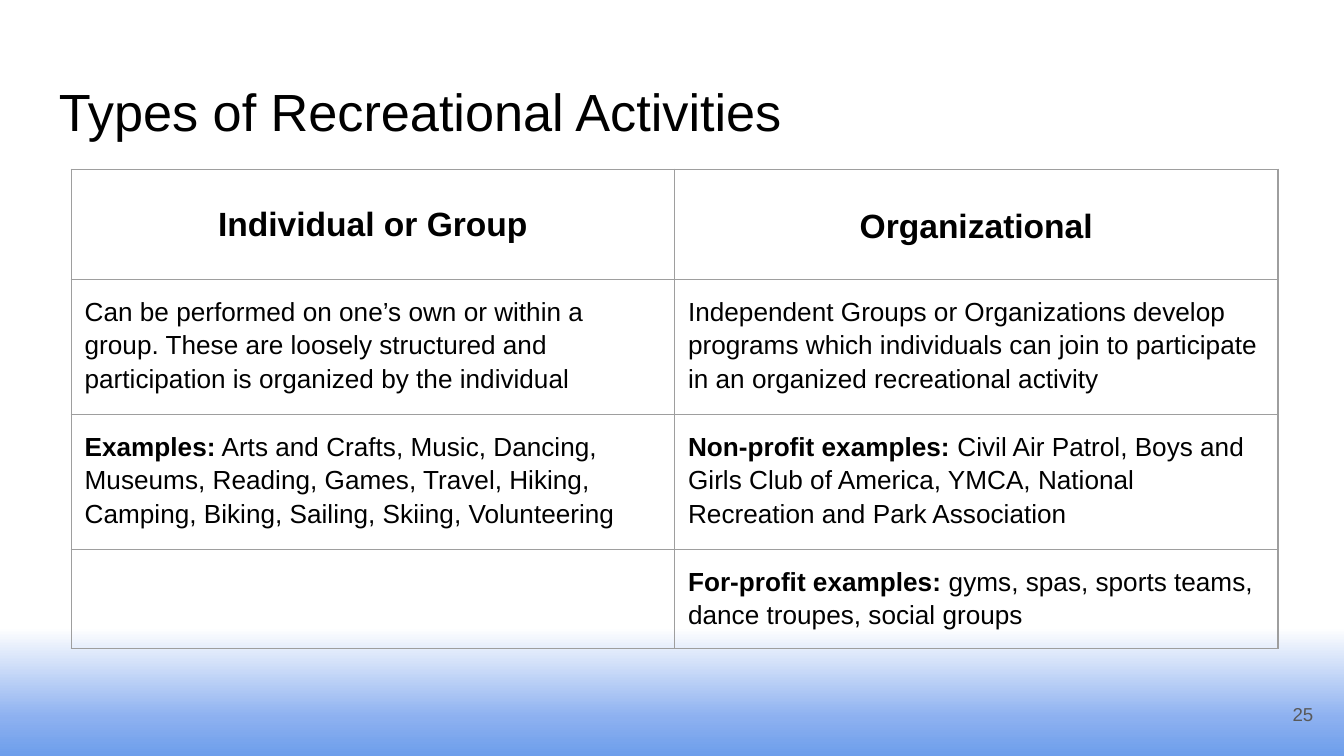
"""Build a slide comparing individual and organizational recreation."""
from pptx import Presentation
from pptx.dml.color import RGBColor
from pptx.enum.text import MSO_ANCHOR, PP_ALIGN
from pptx.oxml import parse_xml
from pptx.oxml.ns import nsdecls, qn
from pptx.util import Inches, Pt

LEFT, CENTER, RIGHT = PP_ALIGN.LEFT, PP_ALIGN.CENTER, PP_ALIGN.RIGHT
TOP, MIDDLE = MSO_ANCHOR.TOP, MSO_ANCHOR.MIDDLE

THEME = {
    "font": "Arial",
    "text": "000000",
    "muted": "595959",
    "border": "9E9E9E",
    "border_width": Pt(0.75),
    "background": [(0, "FFFFFF"), (83, "FFFFFF"), (95, "8CB0F0"), (100, "6D9EEB")],
    "title_size": 28,
    "header_size": 18,
    "body_size": 14,
    "number_size": 10,
    "inset": Inches(0.1),
    "spacing": 1.15,
}

TITLE = "Types of Recreational Activities"
PAGE_NUMBER = "25"
HEADERS = [("Individual or Group", 1.0), ("Organizational", THEME["spacing"])]
BODY = [
    [
        ("", "Can be performed on one’s own or within a group. These are loosely "
             "structured and participation is organized by the individual"),
        ("", "Independent Groups or Organizations develop programs which individuals "
             "can join to participate in an organized recreational activity"),
    ],
    [
        ("Examples:", " Arts and Crafts, Music, Dancing, Museums, Reading, Games, Travel, "
                      "Hiking, Camping, Biking, Sailing, Skiing, Volunteering"),
        ("Non-profit examples:", " Civil Air Patrol, Boys and Girls Club of America, YMCA, "
                                 "National Recreation and Park Association"),
    ],
    [
        ("", ""),
        ("For-profit examples:", " gyms, spas, sports teams, dance troupes, social groups"),
    ],
]
COLUMN_WIDTH = 4.49
ROW_HEIGHTS = [0.82, 0.96, 0.96, 0.71]


def style_paragraph(paragraph, size, color=THEME["text"], align=LEFT, spacing=1.0):
    paragraph.alignment = align
    paragraph.line_spacing = spacing
    font = paragraph.font
    font.name = THEME["font"]
    font.size = Pt(size)
    font.color.rgb = RGBColor.from_string(color)
    paragraph._p.get_or_add_endParaRPr().set("sz", str(size * 100))


def set_insets(target):
    target.margin_left = target.margin_right = THEME["inset"]
    target.margin_top = target.margin_bottom = THEME["inset"]


def paint_background(slide):
    fill = slide.background.fill
    fill.gradient()
    fill.gradient_angle = 270
    stops = slide.element.find(".//" + qn("a:gsLst"))
    stops.clear()
    for percent, color in THEME["background"]:
        stops.append(parse_xml(
            f'<a:gs {nsdecls("a")} pos="{percent * 1000}"><a:srgbClr val="{color}"/></a:gs>'))


def add_text(slide, box, text, anchor, **style):
    frame = slide.shapes.add_textbox(*map(Inches, box)).text_frame
    frame.word_wrap = True
    frame.vertical_anchor = anchor
    set_insets(frame)
    paragraph = frame.paragraphs[0]
    paragraph.add_run().text = text
    style_paragraph(paragraph, **style)


def draw_borders(cell):
    properties = cell._tc.get_or_add_tcPr()
    for index, side in enumerate(("lnL", "lnR", "lnT", "lnB")):
        properties.insert(index, parse_xml(
            f'<a:{side} {nsdecls("a")} w="{THEME["border_width"]}"><a:solidFill>'
            f'<a:srgbClr val="{THEME["border"]}"/></a:solidFill></a:{side}>'))


def fill_cell(cell, label, text, anchor=TOP, **style):
    cell.fill.background()
    cell.vertical_anchor = anchor
    set_insets(cell)
    draw_borders(cell)
    paragraph = cell.text_frame.paragraphs[0]
    for words, bold in ((label, True), (text, False)):
        if words:
            run = paragraph.add_run()
            run.text = words
            run.font.bold = bold
    style_paragraph(paragraph, **style)


def add_comparison(slide):
    size = (COLUMN_WIDTH * len(HEADERS), sum(ROW_HEIGHTS))
    table = slide.shapes.add_table(
        len(ROW_HEIGHTS), len(HEADERS), *map(Inches, (0.53, 1.26, *size))).table
    table.first_row = table.horz_banding = False
    for column in table.columns:
        column.width = Inches(COLUMN_WIDTH)
    for row, height in zip(table.rows, ROW_HEIGHTS):
        row.height = Inches(height)
    for column, (header, spacing) in enumerate(HEADERS):
        fill_cell(table.cell(0, column), header, "", MIDDLE,
                  size=THEME["header_size"], align=CENTER, spacing=spacing)
    for row, entries in enumerate(BODY, start=1):
        for column, (label, text) in enumerate(entries):
            fill_cell(table.cell(row, column), label, text,
                      size=THEME["body_size"], spacing=THEME["spacing"])


def main():
    presentation = Presentation()
    presentation.slide_width = Inches(10)
    presentation.slide_height = presentation.slide_width * 9 // 16
    slide = presentation.slides.add_slide(presentation.slide_layouts[6])
    paint_background(slide)
    add_text(slide, (0.34, 0.49, 9.32, 0.63), TITLE, TOP, size=THEME["title_size"])
    add_comparison(slide)
    add_text(slide, (9.27, 5.1, 0.6, 0.43), PAGE_NUMBER, MIDDLE,
             size=THEME["number_size"], color=THEME["muted"], align=RIGHT)
    presentation.save("out.pptx")


if __name__ == "__main__":
    main()
